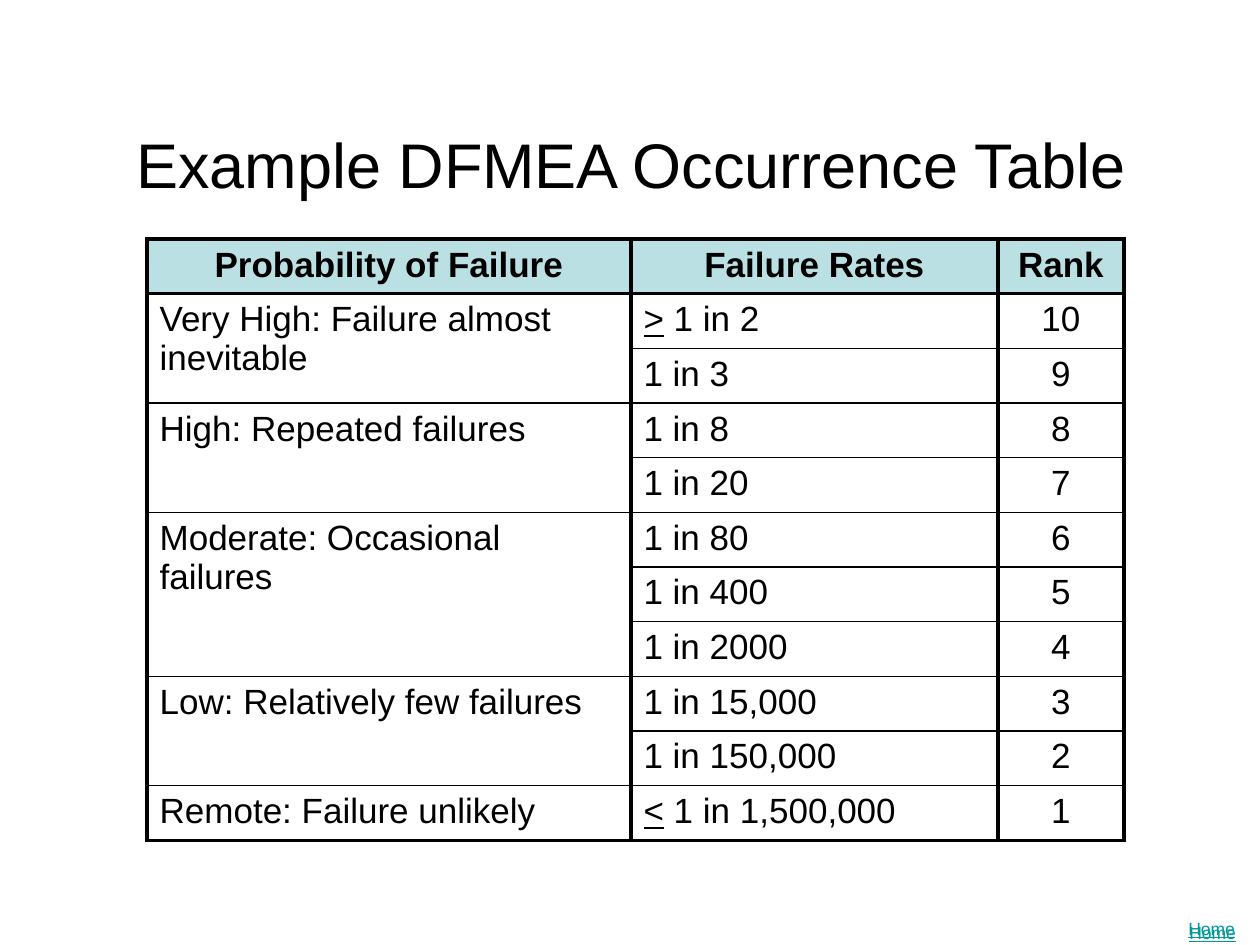
from lxml.etree import SubElement
from pptx import Presentation
from pptx.dml.color import RGBColor
from pptx.enum.text import MSO_ANCHOR, PP_ALIGN
from pptx.oxml.ns import qn
from pptx.util import Emu, Pt

PX = 914400 / 126
COLORS = {"text": "000000", "header": "BBE0E3", "link": "009999", "border": "000000"}


def write(frame, text, size=20, color="text", bold=False, underline=0,
          align=PP_ALIGN.LEFT, anchor=MSO_ANCHOR.TOP):
    frame.word_wrap = True
    frame.vertical_anchor = anchor
    paragraph = frame.paragraphs[0]
    paragraph.alignment = align
    for part, underlined in ((text[:underline], True), (text[underline:], False)):
        if part:
            run = paragraph.add_run()
            run.text = part
            run.font.name = "Arial"
            run.font.size = Pt(size)
            run.font.bold = bold
            run.font.underline = underlined
            run.font.color.rgb = RGBColor.from_string(COLORS[color])


def draw_borders(cell, widths):
    properties = cell._tc.get_or_add_tcPr()
    for side, width in widths.items():
        line = SubElement(properties, qn(f"a:ln{side}"), w=str(Pt(width)))
        fill = SubElement(line, qn("a:solidFill"))
        SubElement(fill, qn("a:srgbClr"), val=COLORS["border"])


presentation = Presentation()
presentation.slide_width = Emu(round(1260 * PX))
presentation.slide_height = Emu(round(945 * PX))
slide = presentation.slides.add_slide(presentation.slide_layouts[5])

for left, top in ((1176, 912), (1177, 916)):
    home = slide.shapes.add_textbox(*(Emu(round(n * PX)) for n in (left, top, 83, 34)))
    write(home.text_frame, "Home", size=10, color="link", underline=4)

header = ("Probability of Failure", "Failure Rates", "Rank")
groups = (
    ("Very High: Failure almost inevitable", ("> 1 in 2", "1 in 3")),
    ("High: Repeated failures", ("1 in 8", "1 in 20")),
    ("Moderate: Occasional failures", ("1 in 80", "1 in 400", "1 in 2000")),
    ("Low: Relatively few failures", ("1 in 15,000", "1 in 150,000")),
    ("Remote: Failure unlikely", ("< 1 in 1,500,000",)),
)
row_count = 1 + sum(len(rates) for _, rates in groups)

occurrence_frame = slide.shapes.add_table(
    row_count, len(header), *(Emu(round(n * PX)) for n in (147, 239, 977, 601)))
occurrence = occurrence_frame.table
occurrence.first_row = False
occurrence.horz_banding = False
for column, width in zip(occurrence.columns, (484, 367, 126)):
    column.width = Emu(round(width * PX))
for row in occurrence.rows:
    row.height = Emu(round(601 * PX / row_count))

for index in range(row_count):
    for cell in occurrence.rows[index].cells:
        draw_borders(cell, {
            "L": 2.25,
            "R": 2.25,
            "T": 2.25 if index < 2 else 1,
            "B": 2.25 if index in (0, row_count - 1) else 1,
        })
        if index == 0:
            cell.fill.solid()
            cell.fill.fore_color.rgb = RGBColor.from_string(COLORS["header"])
        else:
            cell.fill.background()

for column, label in enumerate(header):
    write(occurrence.cell(0, column).text_frame, label, bold=True, align=PP_ALIGN.CENTER)

index = 1
for probability, rates in groups:
    probability_cell = occurrence.cell(index, 0)
    if len(rates) > 1:
        probability_cell.merge(occurrence.cell(index + len(rates) - 1, 0))
    write(probability_cell.text_frame, probability)
    for rate in rates:
        write(occurrence.cell(index, 1).text_frame, rate, underline=int(rate[0] in "<>"))
        write(occurrence.cell(index, 2).text_frame, str(row_count - index),
              align=PP_ALIGN.CENTER)
        index += 1

title = slide.shapes.title
title.left, title.top, title.width, title.height = (
    Emu(round(n * PX)) for n in (102, 84, 1058, 158))
write(title.text_frame, "Example DFMEA Occurrence Table", size=36,
      align=PP_ALIGN.CENTER, anchor=MSO_ANCHOR.MIDDLE)

presentation.save("out.pptx")
